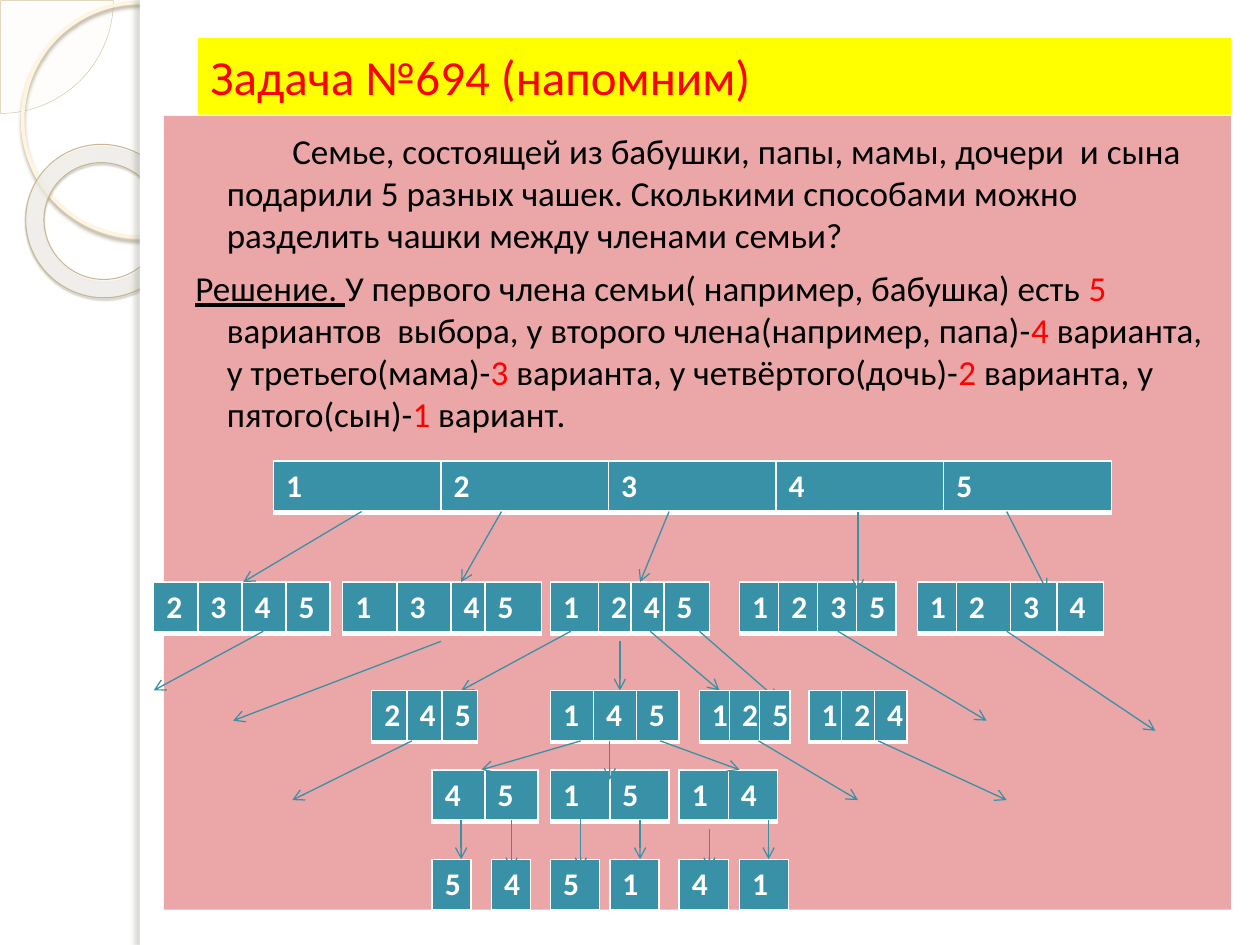
from dataclasses import dataclass

from lxml.etree import SubElement
from pptx import Presentation
from pptx.dml.color import RGBColor
from pptx.enum.shapes import MSO_CONNECTOR, MSO_SHAPE
from pptx.enum.text import MSO_ANCHOR, MSO_AUTO_SIZE, PP_ALIGN
from pptx.oxml.ns import qn
from pptx.util import Inches, Pt


@dataclass(frozen=True)
class Theme:
    font: str = "Calibri"
    white: str = "FFFFFF"
    black: str = "000000"
    red: str = "FF0000"
    yellow: str = "FFFF00"
    pink: str = "EBA7A8"
    teal: str = "3891A7"
    title_size: int = 28
    body_size: int = 20
    cell_size: int = 18


THEME = Theme()
ROW_HEIGHT = 0.41
ROW_TOPS = [3.66, 4.62, 5.48, 6.11, 6.82]
ROWS = [
    [(2.17, "12345", [1.33] * 5)],
    [
        (1.22, "2345", [0.35] * 4),
        (2.72, "1345", [0.43, 0.43, 0.27, 0.45]),
        (4.37, "1245", [0.38, 0.26, 0.26, 0.36]),
        (5.87, "1235", [0.31] * 4),
        (7.28, "1234", [0.31, 0.43, 0.37, 0.37]),
    ],
    [
        (2.95, "245", [0.28] * 3),
        (4.37, "145", [0.34] * 3),
        (5.55, "125", [0.24] * 3),
        (6.42, "124", [0.26] * 3),
    ],
    [(3.43, "45", [0.42] * 2), (4.37, "15", [0.47] * 2), (5.39, "14", [0.39] * 2)],
    [
        (3.43, "5", [0.31]), (3.9, "4", [0.31]), (4.37, "5", [0.39]),
        (4.84, "1", [0.39]), (5.39, "4", [0.39]), (5.87, "1", [0.39]),
    ],
]
ARROWS = [
    [
        (2.87, 4.06, 1.93, 4.62), (3.98, 4.06, 3.66, 4.62), (5.31, 4.06, 5.08, 4.62),
        (6.81, 4.06, 6.81, 4.69), (7.99, 4.06, 8.31, 4.69),
    ],
    [
        (2.09, 5.01, 1.22, 5.48), (3.5, 5.09, 1.85, 5.72), (4.53, 5.01, 3.66, 5.48),
        (4.92, 5.09, 4.92, 5.48), (5.16, 5.01, 5.71, 5.48), (5.55, 5.01, 6.18, 5.56),
        (6.65, 5.01, 7.83, 5.72), (7.99, 5.01, 9.17, 5.8),
    ],
    [
        (3.27, 5.88, 2.32, 6.35), (4.61, 5.88, 3.82, 6.11), (4.84, 5.88, 4.84, 6.19),
        (5.24, 5.88, 5.87, 6.11), (6.02, 5.88, 6.81, 6.35), (6.97, 5.88, 7.99, 6.35),
    ],
    [
        (3.66, 6.51, 3.66, 6.82), (4.06, 6.51, 4.06, 6.9), (4.61, 6.43, 4.61, 6.9),
        (5.08, 6.51, 5.08, 6.82), (5.63, 6.58, 5.63, 6.9), (6.1, 6.51, 6.1, 6.82),
    ],
]
TASK = [("Семье, состоящей из бабушки, папы, мамы, дочери  и сына подарили 5 разных чашек. "
         "Сколькими способами можно разделить чашки между членами семьи?", {})]
RED = {"color": THEME.red}
SOLUTION = [
    ("Решение. ", {"underline": True}),
    ("У первого члена семьи( например, бабушка) есть ", {}),
    ("5", RED), (" вариантов  выбора, у второго члена(например, папа)-", {}),
    ("4", RED), (" варианта, у третьего(мама)-", {}),
    ("3", RED), (" варианта, у четвёртого(дочь)-", {}),
    ("2 ", RED), ("варианта, у пятого(сын)-", {}),
    ("1", RED), (" вариант.", {}),
]


def set_values(target, values):
    for name, value in values.items():
        setattr(target, name, value)


def place(shape, *box):
    set_values(shape, dict(zip(("left", "top", "width", "height"), map(Inches, box))))


def paint(fill, color):
    fill.solid()
    fill.fore_color.rgb = RGBColor.from_string(color)


def add_element(parent, tag, **attributes):
    return SubElement(parent, qn(tag), {name: str(value) for name, value in attributes.items()})


def add_color(parent, color, opacity=100):
    element = add_element(parent, "a:srgbClr", val=color)
    if opacity < 100:
        add_element(element, "a:alpha", val=opacity * 1000)


def add_run(paragraph, text, size, color=THEME.black, **values):
    run = paragraph.add_run()
    run.text = text
    set_values(run.font, {"name": THEME.font, "size": Pt(size), **values})
    run.font.color.rgb = RGBColor.from_string(color)


def add_decoration(slide, kind, box, fill=None, line=None, shadow=None, adjustments=()):
    shape = slide.shapes.add_shape(kind, *map(Inches, box))
    shape.shadow.inherit = False
    for index, value in enumerate(adjustments):
        shape.adjustments[index] = value
    if fill:
        paint(shape.fill, fill)
    else:
        shape.fill.background()
    if line:
        paint(shape.line.fill, line[0])
        shape.line.width = Pt(line[1])
    else:
        shape.line.fill.background()
    if shadow:
        color, opacity, blur, distance, angle = shadow
        effects = shape._element.spPr.find(qn("a:effectLst"))
        outer = add_element(effects, "a:outerShdw", blurRad=Pt(blur), dist=Pt(distance),
                            dir=angle * 60000, algn="tl", rotWithShape=0)
        add_color(outer, color, opacity)
    return shape


def set_ring_gradient(ring):
    solid = ring._element.spPr.find(qn("a:solidFill"))
    gradient = add_element(ring._element.spPr, "a:gradFill", rotWithShape=1)
    stops = add_element(gradient, "a:gsLst")
    for position, color, opacity in [(0, "FFFCF6", 70), (70, "FFFEFB", 55), (100, "F0D28E", 60)]:
        add_color(add_element(stops, "a:gs", pos=position * 1000), color, opacity)
    circle = add_element(gradient, "a:path", path="circle")
    add_element(circle, "a:fillToRect", l=-408000, t=-50000, r=508000, b=150000)
    solid.getparent().replace(solid, gradient)


def add_side_ornament(slide):
    pie = add_decoration(slide, MSO_SHAPE.PIE, (-0.89, -0.89, 1.79, 1.79), "FEFAF4",
                         ("D3C39F", 0.25), adjustments=(0, 54.02))
    color = pie._element.spPr.find(qn("a:solidFill"))[0]
    add_element(color, "a:alpha", val=33000)
    add_decoration(slide, MSO_SHAPE.OVAL, (0.18, 0.02, 1.86, 1.86), None,
                   ("FFF5DE", 2.15), ("B0A68F", 85, 2, 2, 90))
    ring = add_decoration(slide, MSO_SHAPE.DONUT, (0.2, 1.15, 1.23, 1.21), THEME.white,
                          ("C7B893", 0.58), ("5A5444", 35, 1, 1.2, 75), (0.12,))
    ring.rotation = 38.6
    set_ring_gradient(ring)
    add_decoration(slide, MSO_SHAPE.RECTANGLE, (1.11, 0, 8.89, 7.5), THEME.white)
    add_decoration(slide, MSO_SHAPE.RECTANGLE, (1.11, 0, 0.08, 7.5), THEME.white,
                   shadow=("736F63", 25, 3, 3, 180))


def prepare_placeholder(slide, shape, box, color, anchor):
    place(shape, *box)
    paint(shape.fill, color)
    set_values(shape.text_frame, {"word_wrap": True, "auto_size": MSO_AUTO_SIZE.NONE,
                                  "vertical_anchor": anchor})
    slide.shapes._spTree.append(shape._element)


def fill_title(slide):
    title = slide.shapes.title
    prepare_placeholder(slide, title, (1.57, 0.3, 8.2, 0.61), THEME.yellow, MSO_ANCHOR.MIDDLE)
    paragraph = title.text_frame.paragraphs[0]
    paragraph.alignment = PP_ALIGN.LEFT
    add_run(paragraph, "Задача №694 (напомним)", THEME.title_size, THEME.red)


def fill_body(slide):
    body = slide.placeholders[1]
    prepare_placeholder(slide, body, (1.3, 0.92, 8.47, 6.3), THEME.pink, MSO_ANCHOR.TOP)
    frame = body.text_frame
    frame.margin_top = Inches(0.11)
    paragraphs = [frame.paragraphs[0], frame.add_paragraph()]
    for paragraph, runs, indent in zip(paragraphs, (TASK, SOLUTION), (0.52, -0.25)):
        set_values(paragraph, {"space_before": Pt(6), "alignment": PP_ALIGN.LEFT})
        properties = paragraph._p.get_or_add_pPr()
        properties.set("marL", str(Inches(0.4)))
        properties.set("indent", str(Inches(indent)))
        add_element(properties, "a:buNone")
        for text, values in runs:
            add_run(paragraph, text, THEME.body_size, **values)


def add_number_row(slide, left, top, digits, widths):
    frame = slide.shapes.add_table(1, len(digits), Inches(left), Inches(top),
                                   Inches(sum(widths)), Inches(ROW_HEIGHT))
    for column, width, digit in zip(frame.table.columns, widths, digits):
        column.width = Inches(width)
    for cell, digit in zip(frame.table.iter_cells(), digits):
        add_run(cell.text_frame.paragraphs[0], digit, THEME.cell_size, THEME.white, bold=True)
        properties = cell._tc.get_or_add_tcPr()
        for side, width in (("L", 1), ("R", 1), ("T", 1), ("B", 3)):
            border = add_element(properties, f"a:ln{side}", w=Pt(width))
            add_color(add_element(border, "a:solidFill"), THEME.white)
        paint(cell.fill, THEME.teal)


def add_arrow(slide, *ends):
    arrow = slide.shapes.add_connector(MSO_CONNECTOR.STRAIGHT, *map(Inches, ends))
    paint(arrow.line.fill, THEME.teal)
    arrow.line.width = Pt(0.75)
    properties = arrow._element.spPr
    add_element(properties.find(qn("a:ln")), "a:tailEnd", type="arrow")
    add_element(properties, "a:effectLst")


def add_level(slide, level):
    for left, digits, widths in ROWS[level]:
        add_number_row(slide, left, ROW_TOPS[level], digits, widths)


def add_arrows(slide, level):
    for ends in ARROWS[level]:
        add_arrow(slide, *ends)


def main():
    presentation = Presentation()
    set_values(presentation, {"slide_width": Inches(10), "slide_height": Inches(7.5)})
    slide = presentation.slides.add_slide(presentation.slide_layouts[1])
    add_side_ornament(slide)
    fill_title(slide)
    fill_body(slide)
    for level in (0, 1):
        add_level(slide, level)
    for level in (0, 1):
        add_arrows(slide, level)
    add_level(slide, 2)
    for level in (3, 4):
        add_level(slide, level)
        add_arrows(slide, level - 1)
    presentation.save("out.pptx")


if __name__ == "__main__":
    main()
